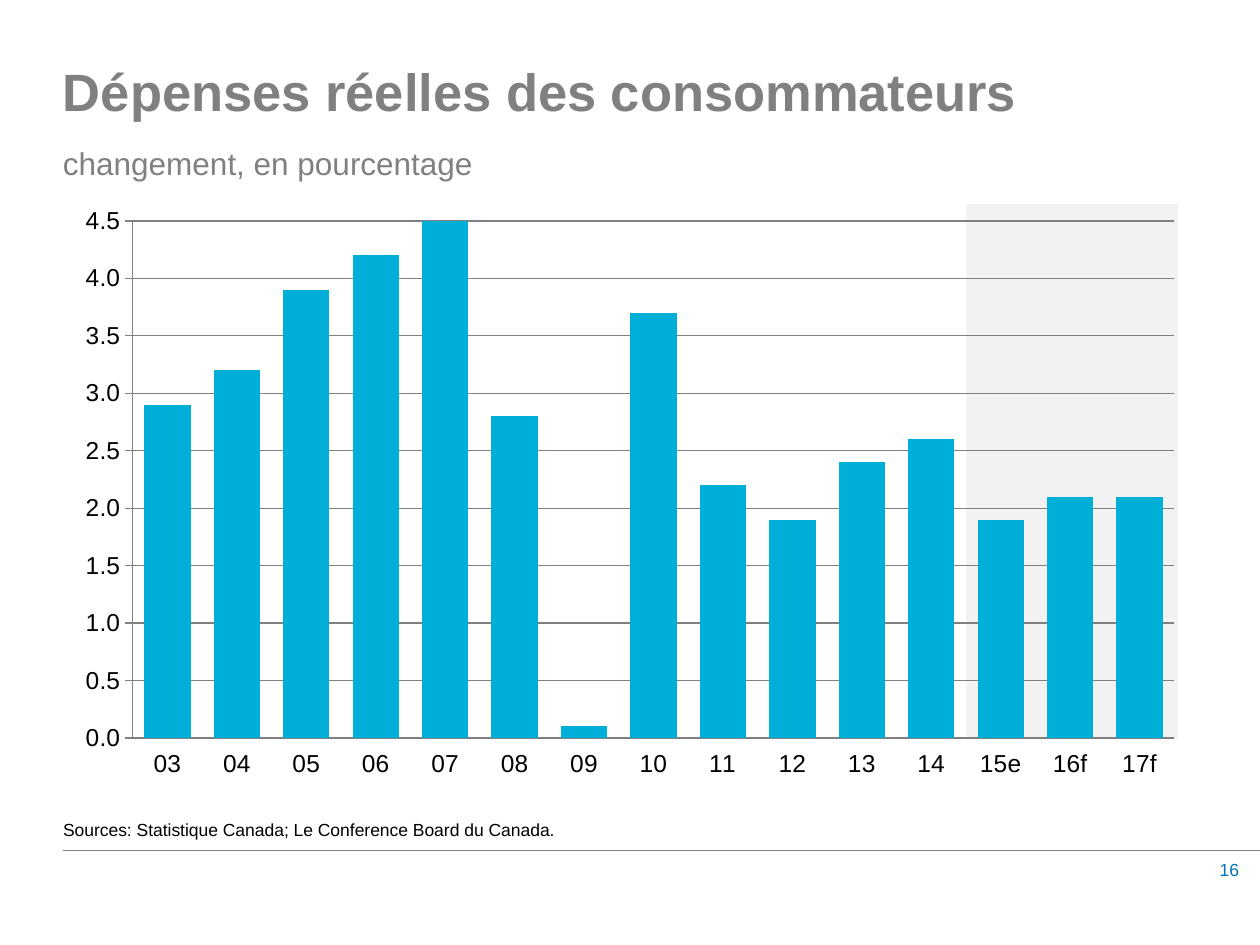
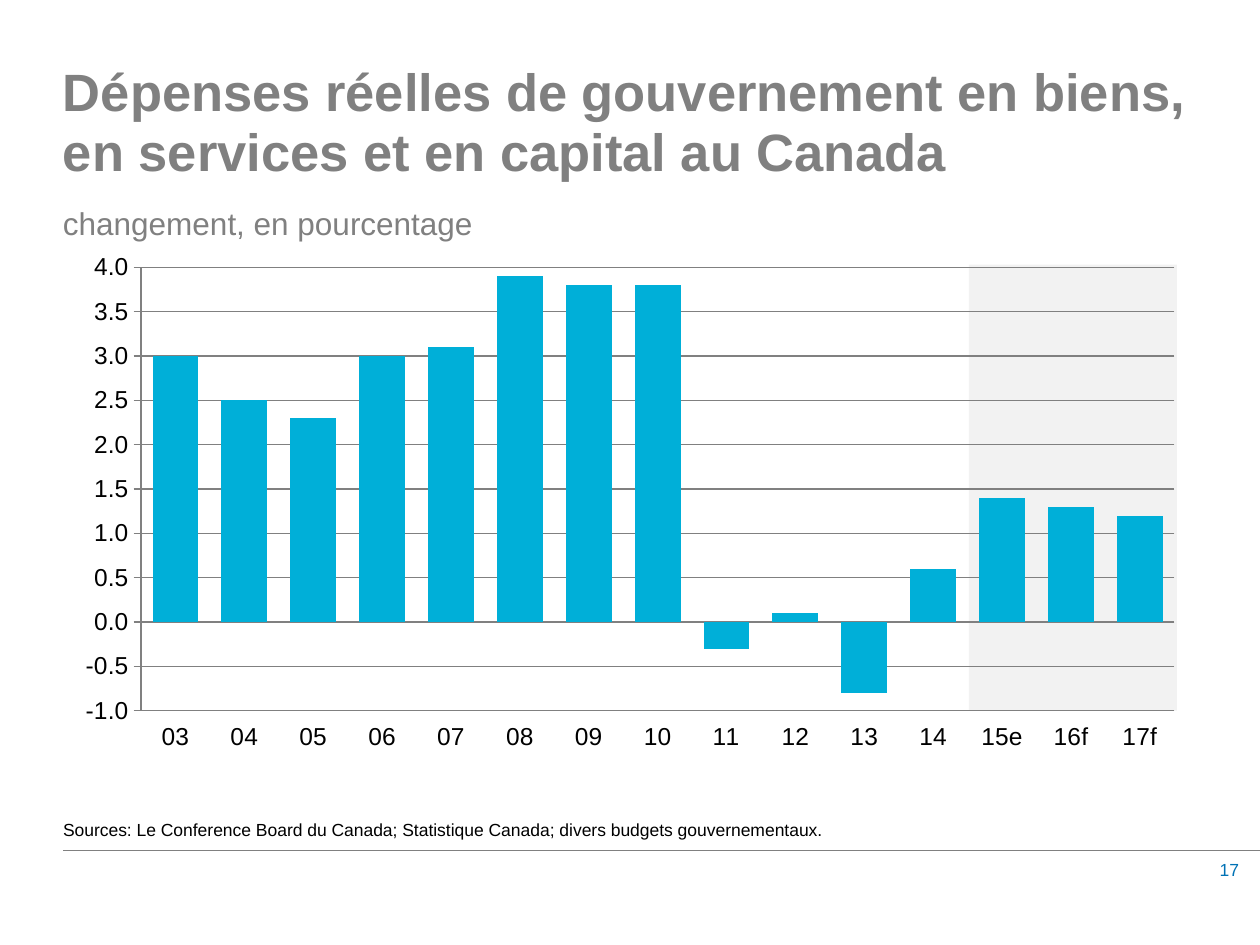
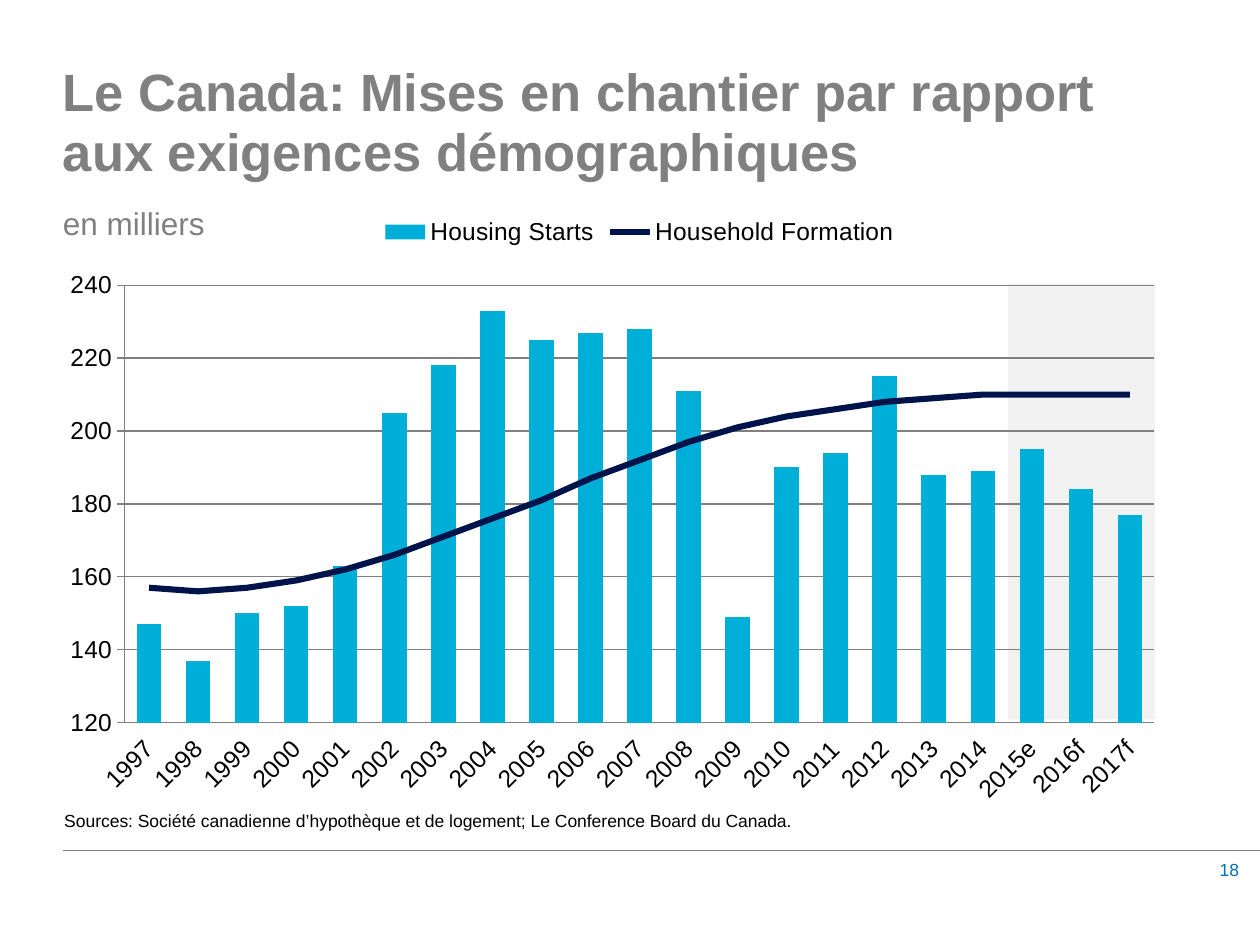
from pptx import Presentation
from pptx.chart.data import CategoryChartData
from pptx.dml.color import RGBColor
from pptx.enum.chart import XL_CHART_TYPE, XL_LEGEND_POSITION, XL_TICK_LABEL_POSITION, XL_TICK_MARK
from pptx.enum.shapes import MSO_CONNECTOR, MSO_SHAPE
from pptx.enum.text import PP_ALIGN
from pptx.oxml import parse_xml
from pptx.oxml.ns import nsdecls, qn
from pptx.util import Pt

COLUMN = XL_CHART_TYPE.COLUMN_CLUSTERED
TOP = XL_LEGEND_POSITION.TOP
LOW = XL_TICK_LABEL_POSITION.LOW
TICK_NONE, TICK_OUT = XL_TICK_MARK.NONE, XL_TICK_MARK.OUTSIDE
STRAIGHT = MSO_CONNECTOR.STRAIGHT
RECT = MSO_SHAPE.RECTANGLE
LEFT, RIGHT = PP_ALIGN.LEFT, PP_ALIGN.RIGHT

FONT = "Arial"
GREY, BLACK, BLUE = "808080", "000000", "0072B5"
BAND, CYAN, NAVY = "F2F2F2", "00AFD8", "00134A"
NS = nsdecls("c", "a")
NO_FILL = f"<c:spPr {NS}><a:noFill/><a:ln><a:noFill/></a:ln></c:spPr>"


def rgb(value):
    return RGBColor.from_string(value)


def add_text(tf, text, size=10, color=BLACK, bold=False, align=LEFT, leading=None):
    p = tf.paragraphs[0] if not tf.text else tf.add_paragraph()
    p.alignment = align
    if leading:
        p.line_spacing = Pt(leading)
    r = p.add_run()
    r.text = text
    r.font.name = FONT
    r.font.size = Pt(size)
    r.font.bold = bold
    r.font.color.rgb = rgb(color)


years = [f"{y:02d}" for y in range(3, 15)] + ["15e", "16f", "17f"]
long_years = [str(y) for y in range(1997, 2015)] + ["2015e", "2016f", "2017f"]

slides = [
    dict(title="Dépenses réelles des consommateurs",
         unit="changement, en pourcentage",
         source="Sources: Statistique Canada; Le Conference Board du Canada.",
         source_at=(36, 468), band=(552.2, 116.6, 121, 306),
         chart=(36, 111.6, 648, 339.8), scale=(0, 4.5, 0.5),
         format="#,##0.0", gap=50, cats=years,
         series={"Series 1": [2.9, 3.2, 3.9, 4.2, 4.6, 2.8, 0.1, 3.7, 2.2,
                              1.9, 2.4, 2.6, 1.9, 2.1, 2.1]}),
    dict(title="Dépenses réelles de gouvernement en biens, en services et en capital au Canada",
         unit="changement, en pourcentage",
         source="Sources: Le Conference Board du Canada; Statistique Canada; "
                "divers budgets gouvernementaux.",
         source_at=(36, 468), band=(553.7, 151.2, 118.8, 254.9),
         chart=(36, 139, 648, 295.9), scale=(-1, 4, 0.5),
         format="#,##0.0", gap=50, cats=years,
         series={"Series 1": [3, 2.5, 2.3, 3, 3.1, 3.9, 3.8, 3.8, -0.3,
                              0.1, -0.8, 0.6, 1.4, 1.3, 1.2]}),
    dict(title="Le Canada: Mises en chantier par rapport aux exigences démographiques",
         unit="en milliers",
         source="Sources: Société canadienne d’hypothèque et de logement; "
                "Le Conference Board du Canada.",
         source_at=(36.7, 463), band=(576, 162, 84.2, 249.1),
         chart=(31, 116.6, 668.9, 357.1), scale=(120, 240, 20),
         format="#,##0", gap=100, cats=long_years,
         series={"Housing Starts": [147, 137, 150, 152, 163, 205, 218, 233, 225, 227, 228,
                                    211, 149, 190, 194, 215, 188, 189, 195, 184, 177],
                 "Household Formation": [157, 156, 157, 159, 162, 166, 171, 176, 181, 187, 192,
                                         197, 201, 204, 206, 208, 209, 210, 210, 210, 210]}),
]

prs = Presentation()
prs.slide_width, prs.slide_height = Pt(720), Pt(540)

for number, d in enumerate(slides, 16):
    s = prs.slides.add_slide(prs.slide_layouts[6])

    rule = s.shapes.add_connector(STRAIGHT, Pt(36), Pt(486), Pt(720), Pt(486))
    rule.line.color.rgb = rgb(GREY)
    rule.line.width = Pt(0.75)
    rule._element.spPr.append(parse_xml(f"<a:effectLst {NS}/>"))

    band = s.shapes.add_shape(RECT, *map(Pt, d["band"]))
    band.shadow.inherit = False
    band.fill.solid()
    band.fill.fore_color.rgb = rgb(BAND)
    band.line.fill.background()

    data = CategoryChartData()
    data.categories = d["cats"]
    for name, values in d["series"].items():
        data.add_series(name, values)
    chart = s.shapes.add_chart(COLUMN, *map(Pt, d["chart"]), data).chart
    chart.has_title = False
    chart.has_legend = False
    chart.font.name = FONT
    chart.font.size = Pt(14)
    chart.font.color.rgb = rgb(BLACK)

    plot = chart.plots[0]
    plot.gap_width = d["gap"]
    plot.vary_by_categories = False
    bars = plot.series[0]
    bars.invert_if_negative = False
    bars.format.fill.solid()
    bars.format.fill.fore_color.rgb = rgb(CYAN)

    cat, val = chart.category_axis, chart.value_axis
    cat.tick_label_position = LOW
    cat.major_tick_mark = TICK_NONE
    cat.tick_labels.font.size = Pt(14)
    val.major_tick_mark = TICK_OUT
    val.minimum_scale, val.maximum_scale, val.major_unit = d["scale"]
    val.tick_labels.number_format = d["format"]
    val.tick_labels.number_format_is_linked = False
    val.tick_labels.font.size = Pt(14)
    val.has_major_gridlines = True
    for part in (cat, val, val.major_gridlines):
        part.format.line.color.rgb = rgb(GREY)
        part.format.line.width = Pt(0.75)

    space = chart._chartSpace
    area = space.chart.plotArea
    space.chart.addnext(parse_xml(NO_FILL))
    area.append(parse_xml(NO_FILL))

    if len(d["series"]) > 1:
        chart.has_legend = True
        chart.legend.position = TOP
        chart.legend.include_in_layout = False
        chart.legend.font.size = Pt(14)
        cat._element.find(qn("c:txPr")).find(qn("a:bodyPr")).set("rot", "-2700000")

        bar_xml = area.find(qn("c:barChart"))
        ser = bar_xml.findall(qn("c:ser"))[1]
        for invert in ser.findall(qn("c:invertIfNegative")):
            ser.remove(invert)
        line_xml = parse_xml(
            f'<c:lineChart {NS}><c:grouping val="standard"/><c:varyColors val="0"/>'
            '<c:marker val="1"/></c:lineChart>')
        line_xml.insert(2, ser)
        for ax in bar_xml.findall(qn("c:axId")):
            line_xml.append(parse_xml(f'<c:axId {NS} val="{ax.get("val")}"/>'))
        bar_xml.addnext(line_xml)
        trend = chart.plots[1].series[0]
        trend.smooth = False
        trend.format.line.color.rgb = rgb(NAVY)
        trend.format.line.width = Pt(3.5)
        ser.find(qn("c:spPr")).addnext(
            parse_xml(f'<c:marker {NS}><c:symbol val="none"/></c:marker>'))

        for old in area.findall(qn("c:layout")):
            area.remove(old)
        frame = "".join(f'<c:{k} val="{v}"/>' for k, v in (
            ("layoutTarget", "inner"), ("xMode", "edge"), ("yMode", "edge"),
            ("x", 0.06), ("y", 0.13), ("w", 0.88), ("h", 0.7)))
        area.insert(0, parse_xml(
            f"<c:layout {NS}><c:manualLayout>{frame}</c:manualLayout></c:layout>"))

    frames = []
    for box in ((36, 36, 648, 70), (*d["source_at"], 639, 18), (684, 491, 24, 12)):
        tf = s.shapes.add_textbox(*map(Pt, box)).text_frame
        tf.word_wrap = True
        tf.margin_left = tf.margin_right = tf.margin_top = tf.margin_bottom = 0
        frames.append(tf)
    title, source, page = frames
    add_text(title, d["title"], size=30, color=GREY, bold=True, leading=34)
    add_text(title, d["unit"], size=18, color=GREY, leading=34)
    add_text(source, d["source"])
    add_text(page, str(number), color=BLUE, align=RIGHT)

prs.save("out.pptx")
